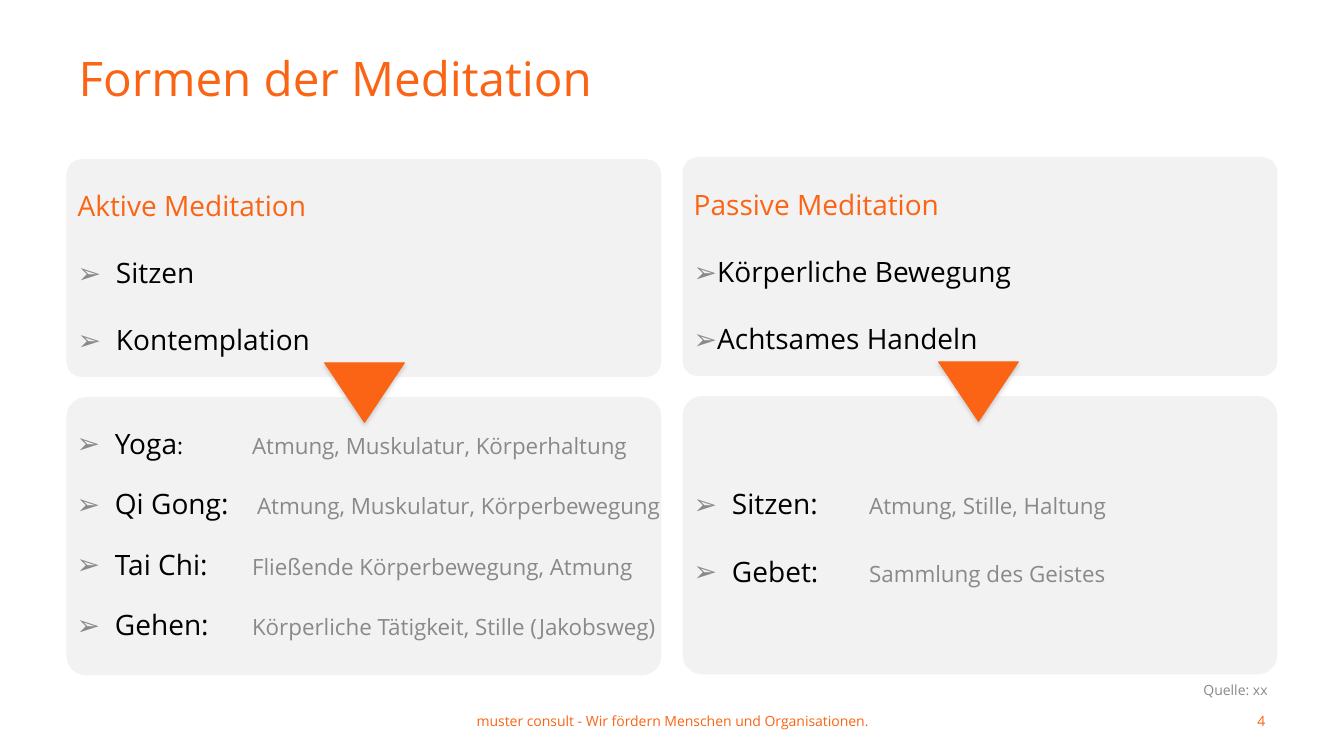
"""Build the slide on forms of meditation."""
import dataclasses
import typing

import lxml.etree
import pptx
import pptx.dml.color
import pptx.enum.shapes
import pptx.enum.text
import pptx.oxml
import pptx.oxml.ns
import pptx.util

Inches, Pt = pptx.util.Inches, pptx.util.Pt
RGB = pptx.dml.color.RGBColor.from_string
SHAPE = pptx.enum.shapes.MSO_SHAPE
ALIGN, ANCHOR = pptx.enum.text.PP_ALIGN, pptx.enum.text.MSO_ANCHOR
qn = pptx.oxml.ns.qn


@dataclasses.dataclass(frozen=True)
class Theme:
    font: str = "Open Sans"
    accent: str = "FA6414"
    panel: str = "F2F2F2"
    text: str = "000000"
    muted: str = "898989"
    shadow: str = "808080"
    title: int = 34
    body: int = 20
    detail: int = 16
    small: int = 10
    leading: float = 1.2


THEME = Theme()


class Box(typing.NamedTuple):
    left: float
    top: float
    width: float
    height: float

    def emu(self) -> list[int]:
        return [Inches(v) for v in self]


class Run(typing.NamedTuple):
    text: str
    size: int = THEME.body
    color: str = THEME.text


class Row(typing.NamedTuple):
    runs: list[Run]
    bullet: bool = True
    indent: float = 0.38
    tab: float = 0


class Body(typing.NamedTuple):
    box: Box
    rows: list[Row]
    gap: int


class Label(typing.NamedTuple):
    box: Box
    text: str
    align: ALIGN
    color: str
    inset: tuple[float, float]


def heading(text: str) -> Row:
    return Row([Run(text, color=THEME.accent)], bullet=False, indent=0)


def practice(label: str, detail: str, tab: float = 1.74, colon: int = THEME.body) -> Row:
    return Row([Run(label), Run(":\t", colon),
                Run(detail, THEME.detail, THEME.muted)], tab=tab)


PANELS = [Box(0.66, 1.58, 5.9, 2.16), Box(6.77, 1.56, 5.9, 2.17),
          Box(0.66, 3.94, 5.9, 2.76), Box(6.77, 3.93, 5.9, 2.76)]
ARROWS = [Box(3.22, 3.6, 0.79, 0.59), Box(9.31, 3.59, 0.79, 0.59)]
TITLE = Body(Box(0.68, 0.44, 6.22, 0.67),
             [Row([Run("Formen der Meditation", THEME.title, THEME.accent)], False, 0)], 0)
BODIES = [
    Body(Box(0.67, 1.82, 5.89, 2.12),
         [heading("Aktive Meditation"), Row([Run("Sitzen")]), Row([Run("Kontemplation")])],
         THEME.body),
    Body(Box(0.66, 4.18, 6.66, 2.26),
         [practice("Yoga", "Atmung, Muskulatur, Körperhaltung", colon=THEME.detail),
          practice("Qi Gong", "Atmung, Muskulatur, Körperbewegung", 1.79),
          practice("Tai Chi", "Fließende Körperbewegung, Atmung"),
          practice("Gehen", "Körperliche Tätigkeit, Stille (Jakobsweg)")],
         THEME.detail),
    Body(Box(6.78, 1.81, 5.89, 2.27),
         [heading("Passive Meditation"), Row([Run("Körperliche Bewegung")], indent=0),
          Row([Run("Achtsames Handeln")], indent=0)],
         THEME.body),
    Body(Box(6.78, 4.78, 5.9, 1.11),
         [practice("Sitzen", "Atmung, Stille, Haltung"),
          practice("Gebet", "Sammlung des Geistes")],
         THEME.body),
]
LABELS = [
    Label(Box(3.33, 6.95, 6.68, 0.4), "muster consult - Wir fördern Menschen und Organisationen.",
          ALIGN.CENTER, THEME.accent, (0.12, 0.06)),
    Label(Box(10.28, 6.95, 2.39, 0.4), "4", ALIGN.RIGHT, THEME.accent, (0.12, 0.06)),
    Label(Box(7.44, 6.71, 5.23, 0.27), "Quelle: xx", ALIGN.RIGHT, THEME.muted, (0.1, 0.05)),
]


def apply(target: typing.Any, formats: dict[str, typing.Any]) -> None:
    for name, value in formats.items():
        setattr(target, name, value)


def add_run(p: typing.Any, run: Run) -> None:
    r = p.add_run()
    r.text = run.text
    apply(r.font, {"name": THEME.font, "size": Pt(run.size), "bold": False})
    r.font.color.rgb = RGB(run.color)


def format_list(p: typing.Any, row: Row) -> None:
    ppr = p._p.get_or_add_pPr()
    ppr.set("marL", str(Inches(row.indent)))
    ppr.set("indent", str(-Inches(row.indent)))
    if row.bullet:
        color = lxml.etree.SubElement(ppr, qn("a:buClr"))
        lxml.etree.SubElement(color, qn("a:srgbClr"), val=THEME.muted)
        lxml.etree.SubElement(ppr, qn("a:buFont"), typeface=THEME.font)
        lxml.etree.SubElement(ppr, qn("a:buChar"), char="➢")
    else:
        lxml.etree.SubElement(ppr, qn("a:buNone"))
    if row.tab:
        tabs = lxml.etree.SubElement(ppr, qn("a:tabLst"))
        lxml.etree.SubElement(tabs, qn("a:tab"), pos=str(Inches(row.tab)), algn="l")


def fill_placeholder(sp: typing.Any, body: Body) -> None:
    apply(sp, dict(zip(("left", "top", "width", "height"), body.box.emu())))
    tf = sp.text_frame
    apply(tf, {"auto_size": pptx.enum.text.MSO_AUTO_SIZE.NONE, "word_wrap": True,
               "vertical_anchor": ANCHOR.TOP})
    for i, row in enumerate(body.rows):
        p = tf.add_paragraph() if i else tf.paragraphs[0]
        format_list(p, row)
        apply(p, {"alignment": ALIGN.LEFT, "space_after": Pt(0),
                  "space_before": Pt(body.gap * THEME.leading if i else 0),
                  "line_spacing": Pt(row.runs[0].size * THEME.leading)})
        for run in row.runs:
            add_run(p, run)


def add_panel(slide: typing.Any, box: Box) -> None:
    s = slide.shapes.add_shape(SHAPE.ROUNDED_RECTANGLE, *box.emu())
    s.adjustments[0] = 0.07
    s.shadow.inherit = False
    s.fill.solid()
    s.fill.fore_color.rgb = RGB(THEME.panel)
    s.line.fill.background()
    slide.shapes._spTree.insert(2, s._element)


def add_arrow(slide: typing.Any, box: Box) -> None:
    s = slide.shapes.add_shape(SHAPE.ISOSCELES_TRIANGLE, *box.emu())
    s._element.spPr.xfrm.set("flipV", "1")
    s.fill.solid()
    s.fill.fore_color.rgb = s.line.color.rgb = RGB(THEME.accent)
    s.line.width = Pt(0.75)
    s.shadow.inherit = False
    effects = s._element.spPr.find(qn("a:effectLst"))
    shadow = lxml.etree.SubElement(effects, qn("a:outerShdw"), blurRad=str(Pt(3.1)),
                                   dist=str(Pt(1.8)), dir="5400000", rotWithShape="0")
    color = lxml.etree.SubElement(shadow, qn("a:srgbClr"), val=THEME.shadow)
    lxml.etree.SubElement(color, qn("a:alpha"), val="35000")


def add_label(slide: typing.Any, label: Label) -> None:
    tf = slide.shapes.add_textbox(*label.box.emu()).text_frame
    x, y = (Inches(v) for v in label.inset)
    apply(tf, {"word_wrap": True, "vertical_anchor": ANCHOR.MIDDLE, "margin_left": x,
               "margin_right": x, "margin_top": y, "margin_bottom": y})
    p = tf.paragraphs[0]
    p.alignment = label.align
    add_run(p, Run(label.text, THEME.small, label.color))


def main() -> None:
    prs = pptx.Presentation()
    apply(prs, {"slide_width": Inches(13.33), "slide_height": Inches(7.5)})
    slide = prs.slides.add_slide(prs.slide_layouts.get_by_name("Comparison"))
    for sp, body in zip(slide.placeholders, [TITLE, *BODIES]):
        fill_placeholder(sp, body)
    for draw, items in ((add_panel, PANELS), (add_arrow, ARROWS), (add_label, LABELS)):
        for item in items:
            draw(slide, item)
    prs.save("out.pptx")


if __name__ == "__main__":
    main()
